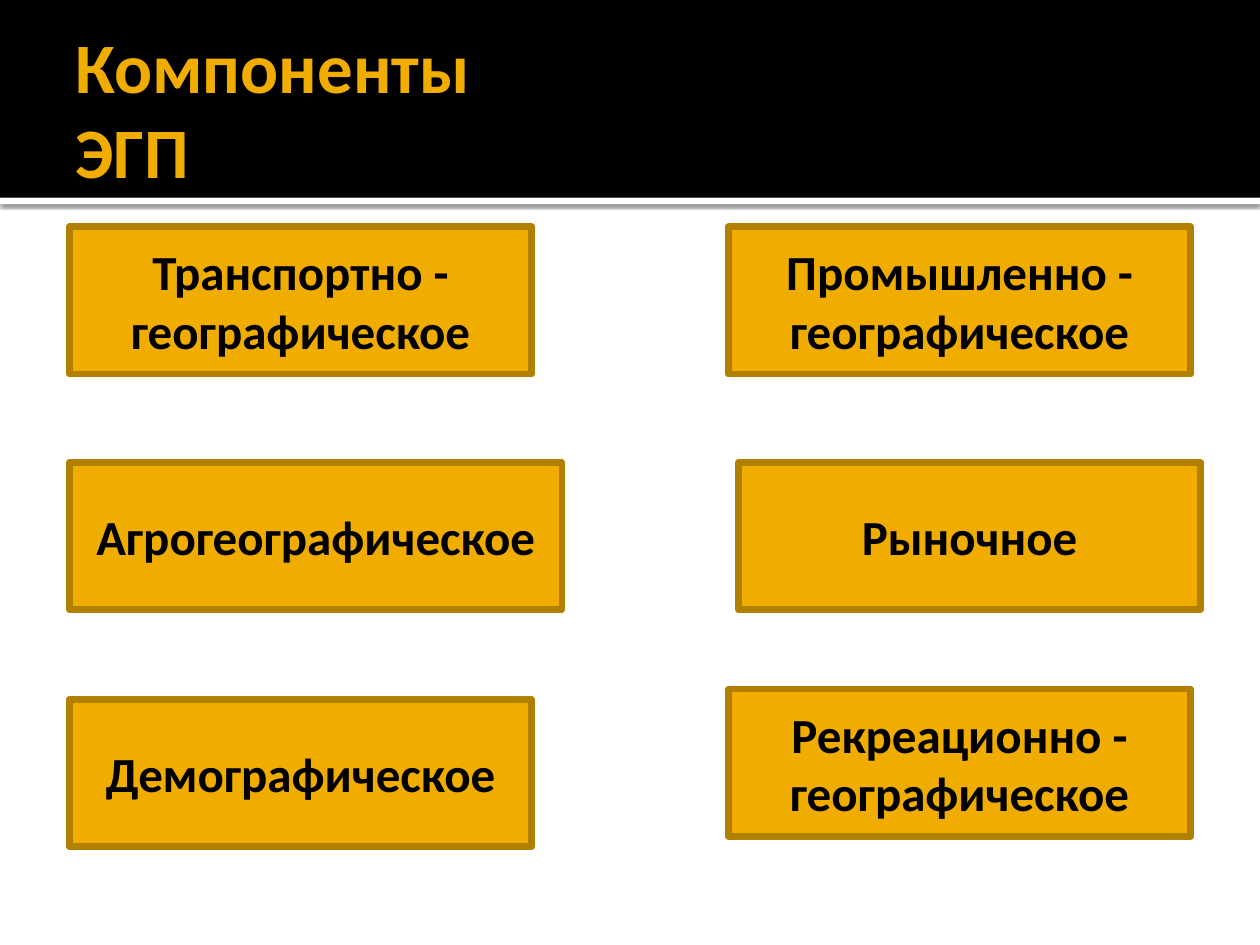
from lxml import etree
from pptx import Presentation
from pptx.dml.color import RGBColor
from pptx.enum.shapes import MSO_SHAPE
from pptx.enum.text import MSO_ANCHOR, PP_ALIGN
from pptx.oxml.ns import qn
from pptx.util import Inches, Pt

RECT = MSO_SHAPE.RECTANGLE
MIDDLE = MSO_ANCHOR.MIDDLE
CENTER = PP_ALIGN.CENTER
COLORS = {"black": "000000", "white": "FFFFFF", "amber": "F0AD00", "border": "B28000"}


def rgb(name):
    return RGBColor.from_string(COLORS[name])


class SlideBuilder:
    """Holds the style and the current slide."""

    font = "Calibri"
    title_size = Pt(40.5)
    box_size = Pt(28)
    border_width = Pt(3.78)

    def __init__(self, slide):
        self.slide = slide

    def rect(self, x, y, w, h, fill):
        s = self.slide.shapes.add_shape(RECT, Inches(x), Inches(y), Inches(w), Inches(h))
        s.shadow.inherit = False
        s.fill.solid()
        s.fill.fore_color.rgb = rgb(fill)
        s.line.fill.background()
        return s

    def drop_shadow(self, s, blur, distance, opacity):
        effects = s._element.spPr.find(qn("a:effectLst"))
        shadow = etree.SubElement(effects, qn("a:outerShdw"), blurRad=str(Pt(blur)),
                                  dist=str(Pt(distance)), dir="5400000",
                                  algn="t", rotWithShape="0")
        color = etree.SubElement(shadow, qn("a:srgbClr"), val=COLORS["black"])
        etree.SubElement(color, qn("a:alpha"), val=str(opacity * 1000))

    def run(self, p, text, size, color):
        r = p.add_run()
        r.text = text
        r.font.name = self.font
        r.font.size = size
        r.font.bold = True
        r.font.color.rgb = rgb(color)

    def title(self, lines, x, y, w, h):
        sp = self.slide.shapes.add_textbox(Inches(x), Inches(y), Inches(w), Inches(h))
        tf = sp.text_frame
        tf.word_wrap = True
        tf.vertical_anchor = MIDDLE
        tf.margin_right = Inches(0.05)
        p = tf.paragraphs[0]
        for i, line in enumerate(lines):
            if i:
                p.add_line_break()
            self.run(p, line, self.title_size, "amber")

    def box(self, text, x, y, w, h):
        s = self.rect(x, y, w, h, "amber")
        s.line.color.rgb = rgb("border")
        s.line.width = self.border_width
        tf = s.text_frame
        tf.word_wrap = True
        tf.vertical_anchor = MIDDLE
        p = tf.paragraphs[0]
        p.alignment = CENTER
        self.run(p, text, self.box_size, "black")


def main():
    prs = Presentation()
    prs.slide_width, prs.slide_height = Inches(10), Inches(7.5)
    page = SlideBuilder(prs.slides.add_slide(prs.slide_layouts[6]))

    # Header band with a shadowed white rule
    rule = page.rect(0, 1.57, 10, 0.05, "white")
    page.drop_shadow(rule, blur=2.5, distance=0.8, opacity=60)
    page.rect(0, 0, 10, 1.57, "black")
    page.title(["Компоненты ", "ЭГП"], 0.5, 0.17, 9, 1.37)

    # Components: text, left, top, width
    width, height = 3.67, 1.17
    components = [
        ("Транспортно - географическое", 0.55, 1.8, width),
        ("Агрогеографическое", 0.55, 3.67, 3.91),
        ("Демографическое", 0.55, 5.55, width),
        ("Рекреационно - географическое", 5.78, 5.47, width),
        ("Рыночное", 5.86, 3.67, width),
        ("Промышленно - географическое", 5.78, 1.8, width),
    ]
    for text, x, y, w in components:
        page.box(text, x, y, w, height)

    prs.save("out.pptx")


if __name__ == "__main__":
    main()
